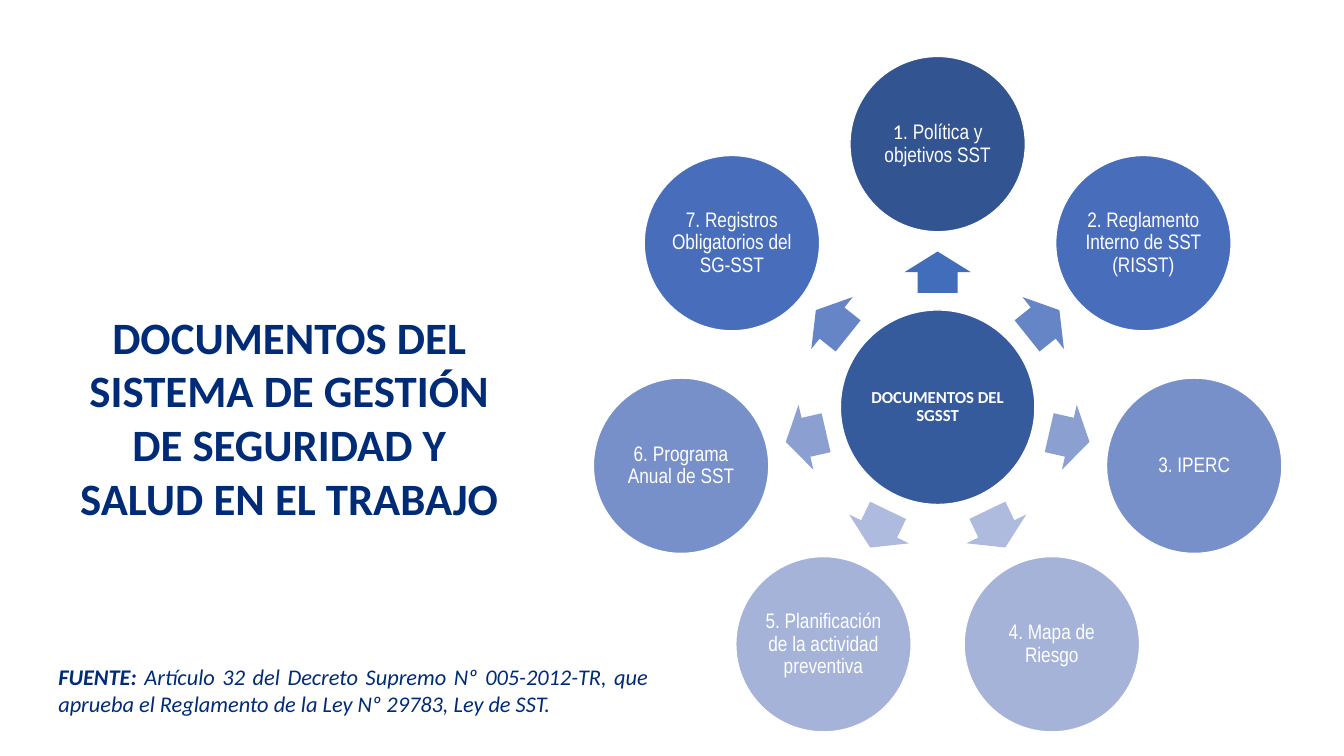
from math import cos, radians, sin

from pptx import Presentation
from pptx.dml.color import RGBColor
from pptx.enum.shapes import MSO_SHAPE
from pptx.enum.text import MSO_ANCHOR, PP_ALIGN
from pptx.util import Inches, Pt

# Content: text boxes hold (text, format) runs
NAVY, WHITE = "002C77", "FFFFFF"
TITLE = [("DOCUMENTOS DEL SISTEMA DE GESTIÓN DE SEGURIDAD Y SALUD EN EL TRABAJO",
          dict(name="Calibri", size=Pt(32), bold=True))]
SOURCE = [
    ("FUENTE: ", dict(name="Calibri", size=Pt(16), bold=True, italic=True)),
    ("Artículo 32 del Decreto Supremo Nº 005-2012-TR, que aprueba el Reglamento "
     "de la Ley Nº 29783, Ley de SST.",
     dict(name="Calibri", size=Pt(16), bold=False, italic=True)),
]
HUB = [("DOCUMENTOS DEL SGSST", dict(name="Calibri", size=Pt(12), bold=True))]
NARROW = dict(name="Arial Narrow", size=Pt(15))
DOCUMENTS = [  # runs, circle colour, arrow colour; clockwise from the top
    ([("1", dict(name="Calibri", size=Pt(15))),
      (". Política y objetivos SST", NARROW)], "325491", "416DBB"),
    ([("2. Reglamento Interno de SST (RISST)", NARROW)], "476DBB", "6685C6"),
    ([("3. IPERC", NARROW)], "7790C9", "8BA0D1"),
    ([("4. Mapa de Riesgo", NARROW)], "A6B3D9", "AFBBDE"),
    ([("5. Planificación de la actividad preventiva", NARROW)], "A6B3D9", "AFBBDE"),
    ([("6. Programa Anual de SST", NARROW)], "7790C9", "8BA0D1"),
    ([("7. Registros Obligatorios del SG-SST", NARROW)], "476DBB", "6685C6"),
]

# Radial layout, in inches
CX, CY = 9.3, 4.04
HUB_SIZE, NODE_SIZE = 1.93, 1.74
NODE_RADIUS, ARROW_RADIUS = 2.61, 1.34
ARROW_W, ARROW_H = 0.41, 0.66

prs = Presentation()
prs.slide_width, prs.slide_height = Inches(13.33), Inches(7.5)
s = prs.slides.add_slide(prs.slide_layouts[6])


def rgb(value):
    return RGBColor.from_string(value)


def write(tf, runs, color, align):
    tf.word_wrap = True
    p = tf.paragraphs[0]
    p.alignment = align
    for text, fmt in runs:
        r = p.add_run()
        r.text = text
        r.font.color.rgb = rgb(color)
        for key, value in fmt.items():
            setattr(r.font, key, value)
    return p


def add_text(box, runs, align):
    sp = s.shapes.add_textbox(*map(Inches, box))
    write(sp.text_frame, runs, NAVY, align)


def add_centered(kind, x, y, w, h, fill):
    sp = s.shapes.add_shape(kind, *map(Inches, (x - w / 2, y - h / 2, w, h)))
    sp.shadow.inherit = False
    sp.fill.solid()
    sp.fill.fore_color.rgb = rgb(fill)
    sp.line.fill.background()
    return sp


def add_circle(x, y, size, fill, runs):
    sp = add_centered(MSO_SHAPE.OVAL, x, y, size, size, fill)
    sp.line.color.rgb = rgb(WHITE)
    sp.line.width = Pt(1)
    tf = sp.text_frame
    for side in ("left", "top", "right", "bottom"):
        setattr(tf, f"margin_{side}", Inches(0.02))
    tf.vertical_anchor = MSO_ANCHOR.MIDDLE
    write(tf, runs, WHITE, PP_ALIGN.CENTER).line_spacing = 0.9


def on_ring(radius, angle):
    return CX + radius * cos(radians(angle)), CY + radius * sin(radians(angle))


# Title
add_text((0.67, 3.02, 4.4, 2.26), TITLE, PP_ALIGN.CENTER)

# Hub with its ring of arrows and documents
add_circle(CX, CY, HUB_SIZE, "365B9D", HUB)
for i, (runs, fill, arrow_fill) in enumerate(DOCUMENTS):
    angle = 360 * i / len(DOCUMENTS) - 90
    arrow = add_centered(MSO_SHAPE.RIGHT_ARROW, *on_ring(ARROW_RADIUS, angle),
                         ARROW_W, ARROW_H, arrow_fill)
    arrow.adjustments[0], arrow.adjustments[1] = 0.6, 0.5
    arrow.rotation = angle % 360
    add_circle(*on_ring(NODE_RADIUS, angle), NODE_SIZE, fill, runs)

# Source note
add_text((0.48, 6.53, 6.05, 0.64), SOURCE, PP_ALIGN.JUSTIFY)

prs.save("out.pptx")
